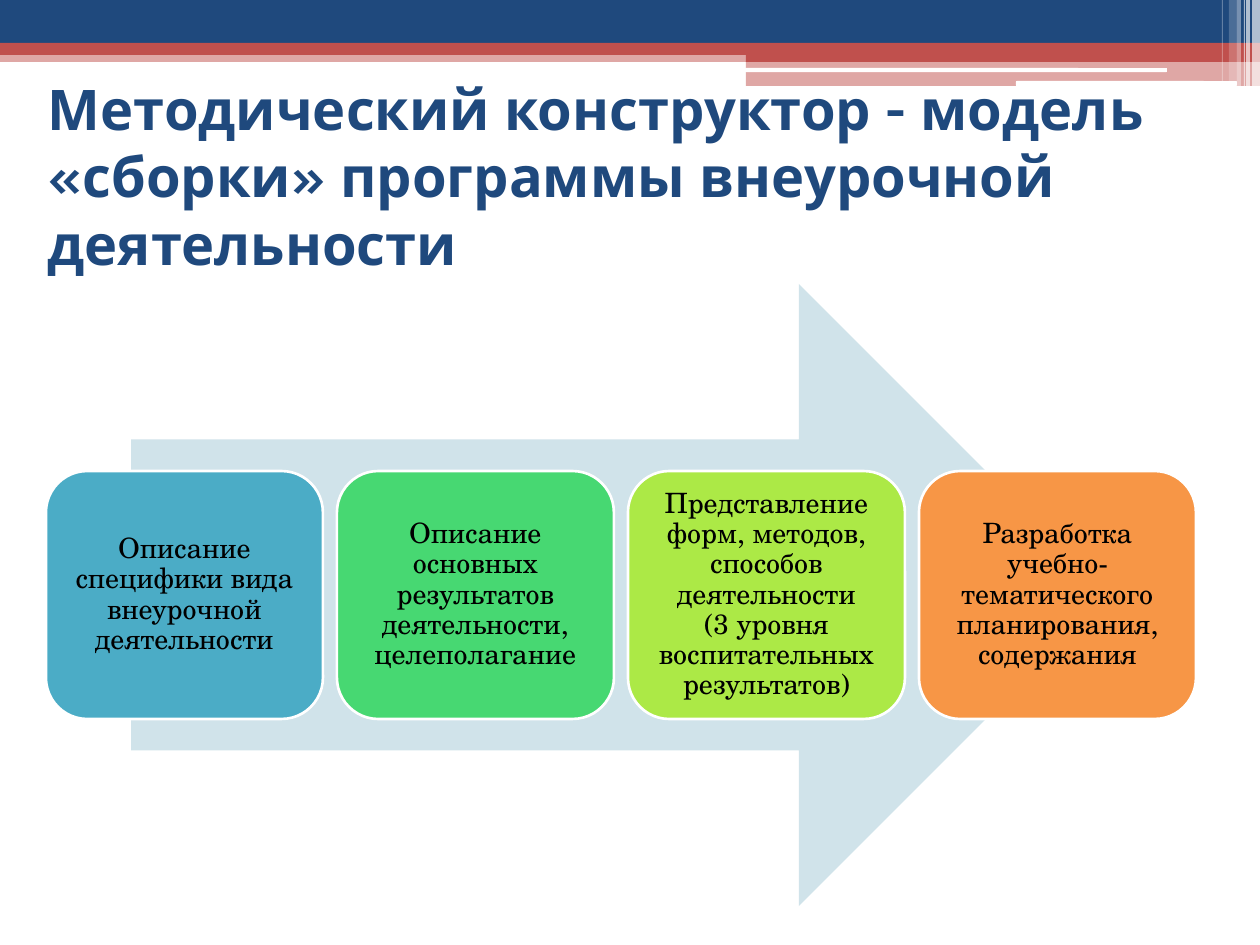
from lxml.etree import SubElement
from pptx import Presentation
from pptx.dml.color import RGBColor
from pptx.enum.shapes import MSO_SHAPE
from pptx.enum.text import MSO_ANCHOR, MSO_AUTO_SIZE, PP_ALIGN
from pptx.oxml.ns import qn
from pptx.util import Emu, Pt

NAVY = RGBColor(0x1F, 0x49, 0x7D)
RED = RGBColor(0xC0, 0x50, 0x4D)
WHITE = RGBColor(0xFF, 0xFF, 0xFF)
BLACK = RGBColor(0x00, 0x00, 0x00)
PALE_BLUE = RGBColor(0xD0, 0xE3, 0xEA)
TEAL = RGBColor(0x4B, 0xAC, 0xC6)
GREEN = RGBColor(0x47, 0xD8, 0x72)
LIME = RGBColor(0xAC, 0xE9, 0x46)
ORANGE = RGBColor(0xF7, 0x96, 0x46)

TITLE = "Методический конструктор - модель «сборки» программы внеурочной деятельности"
STEPS = [
    (TEAL, ["Описание специфики вида внеурочной деятельности"]),
    (GREEN, ["Описание основных результатов деятельности, целеполагание"]),
    (LIME, ["Представление форм, методов, способов деятельности",
            "(3 уровня воспитательных результатов)"]),
    (ORANGE, ["Разработка учебно-тематического планирования, содержания"]),
]
BANDS = [
    ((0, 50, 1260, 12), RED, 50),
    ((0, 0, 1260, 43), NAVY, 100),
    ((0, 43, 1260, 12), RED, 100),
    ((746, 49, 514, 13), RED, 100),
    ((746, 61, 514, 25), RED, 50),
]
HIGHLIGHTS = [(745, 68, 422, 4), (1016, 81, 221, 5)]
STRIPES = [
    (1252, 8, 86, 65), (1246, 4, 86, 65), (1244, 1, 86, 60),
    (1237, 4, 86, 40), (1229, 8, 81, 20), (1222, 1, 81, 30),
]
TITLE_BOX = (35, 96, 1191, 159)
ARROW_BOX = (131, 284, 979, 622)
CARD_LEFT, CARD_TOP, CARD_WIDTH, CARD_HEIGHT = 46, 471, 277, 248
CARD_PITCH, CARD_INSET = 291, 9


def px(value):
    return Emu(round(value * 914400 / 126))


def add_block(slide, kind, box, color, opacity=100):
    shape = slide.shapes.add_shape(kind, *map(px, box))
    shape.shadow.inherit = False
    shape.fill.solid()
    shape.fill.fore_color.rgb = color
    shape.line.fill.background()
    if opacity < 100:
        color_element = shape.fill._xPr.find(".//" + qn("a:srgbClr"))
        SubElement(color_element, qn("a:alpha"), val=str(opacity * 1000))
    return shape


def add_run(paragraph, text, font_name, size, color, bold=False):
    run = paragraph.add_run()
    run.text = text
    run.font.name = font_name
    run.font.size = Pt(size)
    run.font.color.rgb = color
    run.font.bold = bold


def add_header(slide):
    for box, color, opacity in BANDS:
        add_block(slide, MSO_SHAPE.RECTANGLE, box, color, opacity)
    for box in HIGHLIGHTS:
        add_block(slide, MSO_SHAPE.ROUNDED_RECTANGLE, box, WHITE)
    for left, width, height, opacity in STRIPES:
        add_block(slide, MSO_SHAPE.RECTANGLE, (left, 0, width, height), WHITE, opacity)


def fill_title(slide):
    title = slide.shapes.title
    title.left, title.top, title.width, title.height = map(px, TITLE_BOX)
    frame = title.text_frame
    frame.word_wrap = True
    frame.auto_size = MSO_AUTO_SIZE.NONE
    frame.vertical_anchor = MSO_ANCHOR.MIDDLE
    paragraph = frame.paragraphs[0]
    paragraph.alignment = PP_ALIGN.LEFT
    add_run(paragraph, TITLE, "Karla", 32, NAVY, bold=True)


def add_card(slide, index, color, lines):
    box = (CARD_LEFT + index * CARD_PITCH, CARD_TOP, CARD_WIDTH, CARD_HEIGHT)
    card = add_block(slide, MSO_SHAPE.ROUNDED_RECTANGLE, box, color)
    card.line.color.rgb = WHITE
    card.line.width = Pt(1.5)
    frame = card.text_frame
    frame.word_wrap = True
    frame.vertical_anchor = MSO_ANCHOR.MIDDLE
    frame.margin_left = frame.margin_right = px(CARD_INSET)
    frame.margin_top = frame.margin_bottom = px(CARD_INSET)
    paragraph = frame.paragraphs[0]
    paragraph.alignment = PP_ALIGN.CENTER
    paragraph.line_spacing = 0.9
    for number, line in enumerate(lines):
        if number:
            paragraph.add_line_break()
        add_run(paragraph, line, "TeX Gyre Schola", 16, BLACK)


def main():
    """Build the slide with the four steps of the programme along an arrow."""
    presentation = Presentation()
    presentation.slide_width, presentation.slide_height = px(1260), px(945)
    slide = presentation.slides.add_slide(presentation.slide_layouts[5])
    add_header(slide)
    fill_title(slide)
    add_block(slide, MSO_SHAPE.RIGHT_ARROW, ARROW_BOX, PALE_BLUE)
    for index, (color, lines) in enumerate(STEPS):
        add_card(slide, index, color, lines)
    presentation.save("out.pptx")


if __name__ == "__main__":
    main()
